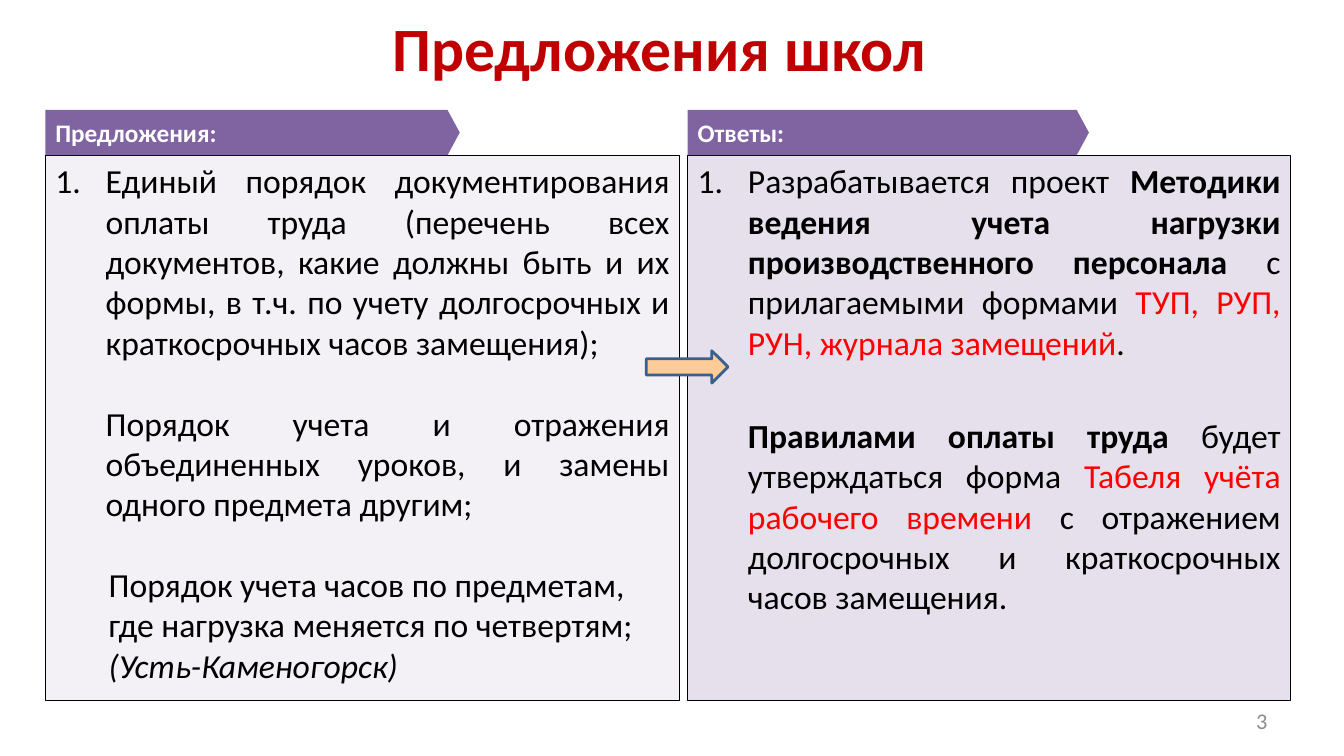
from pptx import Presentation
from pptx.dml.color import RGBColor
from pptx.enum.shapes import MSO_SHAPE
from pptx.enum.text import MSO_ANCHOR, PP_ALIGN
from pptx.util import Inches, Pt
from lxml import etree

RECT, PENTAGON, ARROW = MSO_SHAPE.RECTANGLE, MSO_SHAPE.PENTAGON, MSO_SHAPE.RIGHT_ARROW
TOP, MIDDLE = MSO_ANCHOR.TOP, MSO_ANCHOR.MIDDLE
LEFT, CENTER, RIGHT, JUSTIFY = PP_ALIGN.LEFT, PP_ALIGN.CENTER, PP_ALIGN.RIGHT, PP_ALIGN.JUSTIFY
NS = "{http://schemas.openxmlformats.org/drawingml/2006/main}"

THEME = {
    "font": "Calibri", "title": "C00000", "header": "8064A2", "panel": "E6E0EC",
    "text": "000000", "accent": "FF0000", "white": "FFFFFF", "number": "8C8C8C",
    "arrow": "FFCC99", "arrow_line": "3A5F8C",
    "title_size": 44, "body_size": 24, "header_size": 18, "number_size": 16,
}

prs = Presentation()
prs.slide_width, prs.slide_height = Inches(13.33), Inches(7.5)
s = prs.slides.add_slide(prs.slide_layouts[6])


def add_box(shape, box, fill=None, line=None, width=1, anchor=MIDDLE):
    box = [Inches(v) for v in box]
    if shape is None:
        sp = s.shapes.add_textbox(*box)
    else:
        sp = s.shapes.add_shape(shape, *box)
        sp.shadow.inherit = False
        sp.fill.solid()
        sp.fill.fore_color.rgb = RGBColor.from_string(THEME[fill])
        if line:
            sp.line.color.rgb = RGBColor.from_string(THEME[line])
            sp.line.width = Pt(width)
        else:
            sp.line.fill.background()
    sp.text_frame.word_wrap = True
    sp.text_frame.vertical_anchor = anchor
    return sp


def write(p, runs, size, align=LEFT):
    p.alignment = align
    for text, color, style in runs:
        r = p.add_run()
        r.text = text
        r.font.name = THEME["font"]
        r.font.size = Pt(THEME[size])
        r.font.color.rgb = RGBColor.from_string(THEME[color])
        r.font.bold = style == "bold"
        r.font.italic = style == "italic"


title = add_box(None, (0.59, 0, 11.91, 0.93))
write(title.text_frame.paragraphs[0], [("Предложения школ", "title", "bold")], "title_size", CENTER)

HEADER_TOP, HEADER_H, PANEL_H = 1.09, 0.45, 5.41
INDENT, NOTE_INDENT = 0.5, 0.53

proposals = [
    (INDENT, 0, [("Единый порядок документирования оплаты труда (перечень всех документов, какие должны быть и их формы, в т.ч. по учету долгосрочных и краткосрочных часов замещения);", "text", "")]),
    (INDENT, 29, [("Порядок учета и отражения объединенных уроков, и замены одного предмета другим;", "text", "")]),
    (NOTE_INDENT, 29, [("Порядок учета часов по предметам,", "text", "")]),
    (NOTE_INDENT, 0, [("где нагрузка меняется по четвертям;", "text", "")]),
    (NOTE_INDENT, 0, [("(Усть-Каменогорск)", "text", "italic")]),
]
answers = [
    (INDENT, 0, [
        ("Разрабатывается проект ", "text", ""),
        ("Методики ведения учета нагрузки производственного персонала ", "text", "bold"),
        ("с прилагаемыми формами ", "text", ""),
        ("ТУП, РУП, РУН, журнала замещений", "accent", ""),
        (".", "text", ""),
    ]),
    (INDENT, 38, [
        ("Правилами оплаты труда ", "text", "bold"),
        ("будет утверждаться форма ", "text", ""),
        ("Табеля учёта рабочего времени", "accent", ""),
        (" с отражением долгосрочных и краткосрочных часов замещения.", "text", ""),
    ]),
]
columns = [
    (0.45, 6.29, 4.11, "Предложения:", proposals, 47),
    (6.82, 5.98, 3.98, "Ответы:", answers, 100),
]

for x, panel_w, header_w, heading, paragraphs, opacity in columns:
    panel = add_box(RECT, (x, HEADER_TOP + HEADER_H, panel_w, PANEL_H), "panel", "text", 1, TOP)
    if opacity < 100:
        color = panel.fill._xPr.find(f"{NS}solidFill/{NS}srgbClr")
        etree.SubElement(color, f"{NS}alpha", val=str(opacity * 1000))
    tf = panel.text_frame
    for i, (indent, gap, runs) in enumerate(paragraphs):
        p = tf.add_paragraph() if i else tf.paragraphs[0]
        write(p, runs, "body_size", JUSTIFY)
        p.space_before = Pt(gap)
        pPr = p._p.get_or_add_pPr()
        pPr.set("marL", str(Inches(indent)))
        if i == 0:
            pPr.set("indent", str(-Inches(indent)))
            etree.SubElement(pPr, f"{NS}buFont", typeface="+mj-lt")
            etree.SubElement(pPr, f"{NS}buAutoNum", type="arabicPeriod")
    header = add_box(PENTAGON, (x, HEADER_TOP, header_w, HEADER_H), "header")
    header.adjustments[0] = 0.27
    write(header.text_frame.paragraphs[0], [(heading, "white", "bold")], "header_size")

add_box(ARROW, (6.41, 3.48, 0.81, 0.32), "arrow", "arrow_line", 2)

number = add_box(None, (9.56, 6.95, 3.11, 0.4))
write(number.text_frame.paragraphs[0], [("3", "number", "")], "number_size", RIGHT)

prs.save("out.pptx")
